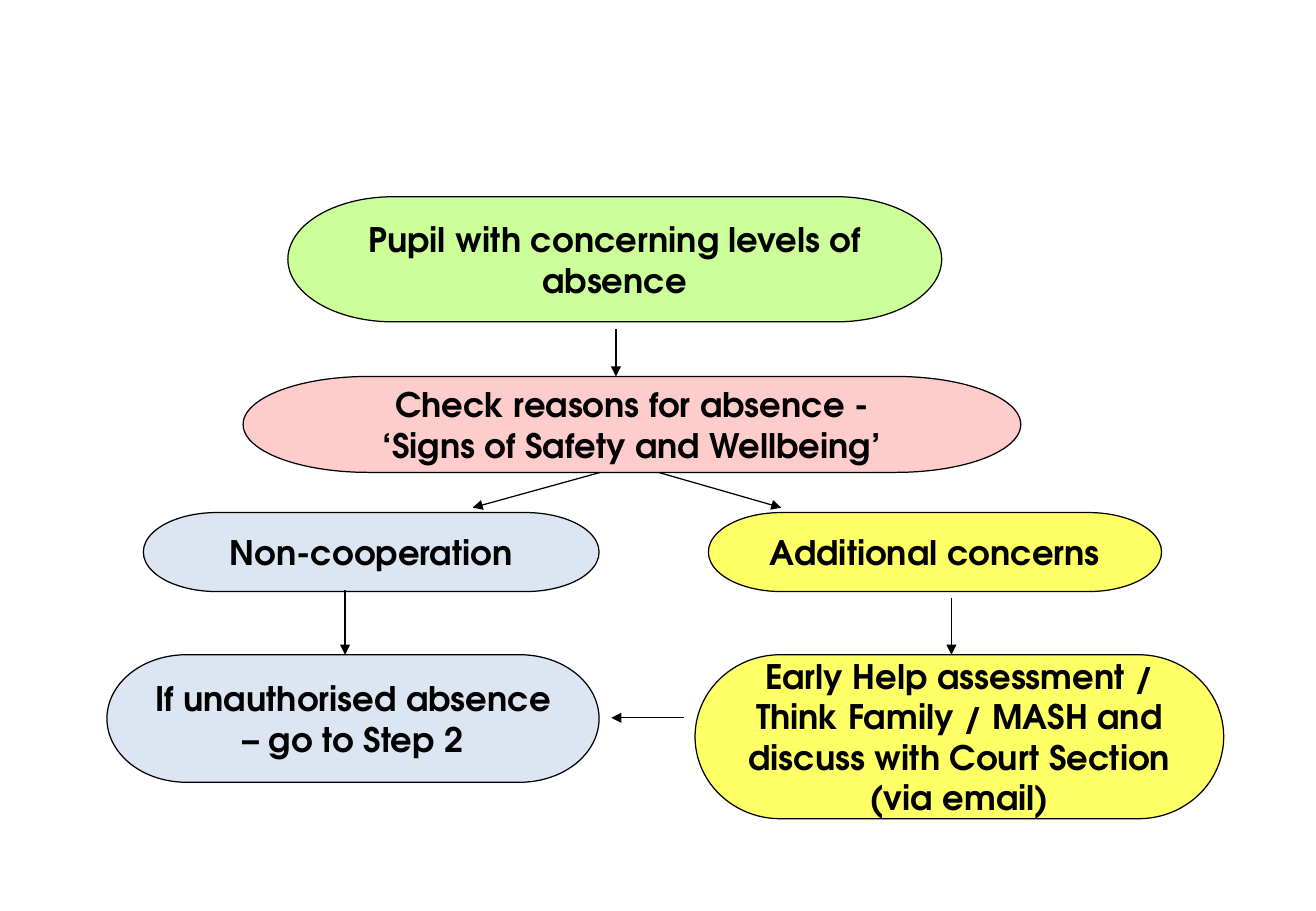
import lxml.etree
import pptx
import pptx.dml.color
import pptx.enum.shapes
import pptx.enum.text
import pptx.oxml.ns
import pptx.util

BLACK = pptx.dml.color.RGBColor(0x00, 0x00, 0x00)
GREEN = pptx.dml.color.RGBColor(0xCC, 0xFF, 0x99)
PINK = pptx.dml.color.RGBColor(0xFF, 0xCC, 0xCC)
BLUE = pptx.dml.color.RGBColor(0xDC, 0xE6, 0xF2)
YELLOW = pptx.dml.color.RGBColor(0xFF, 0xFF, 0x66)
FONT = "TeX Gyre Adventor"

CHECK_TOP, CHECK_BOTTOM = 41.33, 51.86
BRANCH_TOP, BRANCH_HEIGHT = 56.27, 8.67
OUTCOME_TOP = 71.87

STEPS = [
    ((21.88, 21.6, 49.68, 13.73), GREEN, ["Pupil with concerning levels of absence"]),
    ((18.47, CHECK_TOP, 59.1, CHECK_BOTTOM - CHECK_TOP), PINK,
     ["Check reasons for absence -", "‘Signs of Safety and Wellbeing’"]),
    ((10.9, BRANCH_TOP, 34.63, BRANCH_HEIGHT), BLUE, ["Non-cooperation"]),
    ((53.83, BRANCH_TOP, 34.44, BRANCH_HEIGHT), YELLOW, ["Additional concerns"]),
    ((8.13, OUTCOME_TOP, 37.4, 14), BLUE, ["If unauthorised absence – go to Step 2"]),
    ((52.82, OUTCOME_TOP, 40.17, 18), YELLOW,
     ["Early Help assessment / Think Family / MASH and discuss with Court Section (via email)"]),
]

ARROWS = [
    ((46.81, 36.13), (46.81, CHECK_TOP)),
    ((45.61, CHECK_BOTTOM), (35.92, 55.73)),
    ((50.05, CHECK_BOTTOM), (59.37, 55.73)),
    ((26.22, 64.8), (26.22, OUTCOME_TOP)),
    ((72.3, 65.6), (72.3, OUTCOME_TOP)),
    ((51.99, 78.8), (46.45, 78.8)),
]


def style_line(line):
    """Give an outline or arrow its thin black stroke."""
    line.color.rgb = BLACK
    line.width = pptx.util.Pt(0.75)


def add_step(slide, box, fill, lines):
    """Draw one rounded step with its centred bold text."""
    step = slide.shapes.add_shape(
        pptx.enum.shapes.MSO_SHAPE.FLOWCHART_TERMINATOR, *box)
    step.shadow.inherit = False
    step.fill.solid()
    step.fill.fore_color.rgb = fill
    style_line(step.line)
    frame = step.text_frame
    frame.word_wrap = True
    frame.vertical_anchor = pptx.enum.text.MSO_ANCHOR.MIDDLE
    for index, text in enumerate(lines):
        paragraph = frame.add_paragraph() if index else frame.paragraphs[0]
        paragraph.alignment = pptx.enum.text.PP_ALIGN.CENTER
        run = paragraph.add_run()
        run.text = text
        run.font.name = FONT
        run.font.size = pptx.util.Pt(20)
        run.font.bold = True
        run.font.color.rgb = BLACK


def add_arrow(slide, start, end):
    """Draw a straight arrow pointing at its end."""
    arrow = slide.shapes.add_connector(
        pptx.enum.shapes.MSO_CONNECTOR.STRAIGHT, *start, *end)
    style_line(arrow.line)
    lxml.etree.SubElement(
        arrow.line._get_or_add_ln(), pptx.oxml.ns.qn("a:tailEnd"), type="triangle")
    lxml.etree.SubElement(arrow._element.spPr, pptx.oxml.ns.qn("a:effectLst"))


def add_flowchart(slide, left, top, width, height):
    """Place the absence flowchart by percentages of the given box."""
    def point(x, y):
        """Turn percentages into a position in the box."""
        return round(left + width * x / 100), round(top + height * y / 100)

    for (x, y, w, h), fill, lines in STEPS:
        size = round(width * w / 100), round(height * h / 100)
        add_step(slide, (*point(x, y), *size), fill, lines)
    for start, end in ARROWS:
        add_arrow(slide, point(*start), point(*end))


def main():
    """Build and save the slide."""
    deck = pptx.Presentation()
    deck.slide_width = pptx.util.Inches(10.83)
    deck.slide_height = pptx.util.Inches(7.5)
    slide = deck.slides.add_slide(deck.slide_layouts[6])
    add_flowchart(slide, 0, 0, deck.slide_width, deck.slide_height)
    deck.save("out.pptx")


if __name__ == "__main__":
    main()
